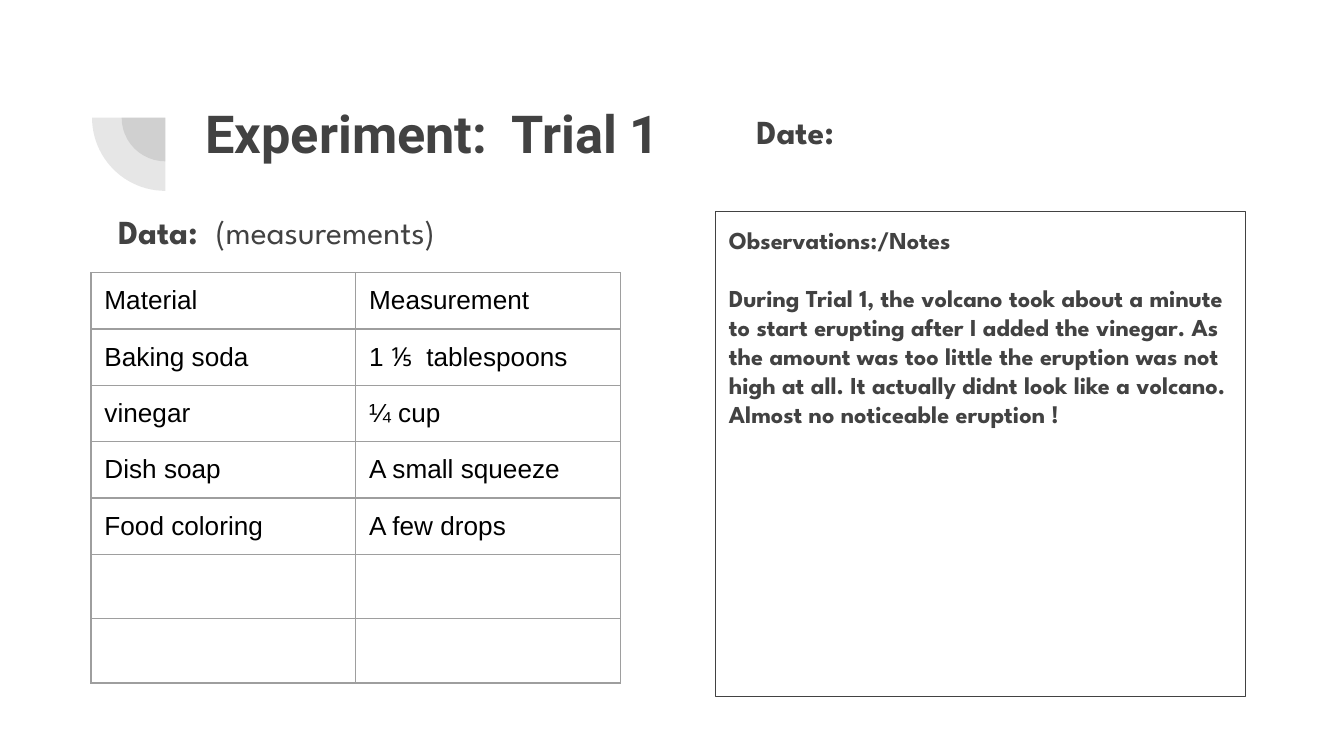
from lxml import etree
from pptx import Presentation
from pptx.dml.color import RGBColor
from pptx.enum.shapes import MSO_SHAPE
from pptx.enum.text import MSO_ANCHOR, MSO_AUTO_SIZE, PP_ALIGN
from pptx.oxml.ns import qn
from pptx.util import Inches, Pt

PIE, RECT = MSO_SHAPE.PIE, MSO_SHAPE.RECTANGLE
TOP = MSO_ANCHOR.TOP
NONE, LEFT = MSO_AUTO_SIZE.NONE, PP_ALIGN.LEFT


def color(code):
    return RGBColor.from_string(code)


def write(para, text, font="League Spartan", size=18, ink="424242", bold=True):
    run = para.add_run()
    run.text = text
    run.font.name = font
    run.font.size = Pt(size)
    run.font.bold = bold
    run.font.color.rgb = color(ink)
    para.alignment = LEFT


class Page:
    ink, rule, pad = "424242", "9E9E9E", Inches(0.1)

    def __init__(self, deck):
        self.wide, self.high = deck.slide_width, deck.slide_height
        self.slide = deck.slides.add_slide(deck.slide_layouts[5])
        self.shapes = self.slide.shapes

    def across(self, share):
        return round(self.wide * share / 100)

    def down(self, share):
        return round(self.high * share / 100)

    def area(self, x, y, w, h):
        return self.across(x), self.down(y), self.across(w), self.down(h)

    def inset(self, item):
        item.margin_left = item.margin_right = self.pad
        item.margin_top = item.margin_bottom = self.pad

    def frame(self, shape):
        frame = shape.text_frame
        frame.word_wrap = True
        frame.auto_size = NONE
        frame.vertical_anchor = TOP
        self.inset(frame)
        return frame

    def sector(self, x, y, radius):
        r = self.across(radius)
        left, top = self.across(x) - r, self.down(y) - r
        pie = self.shapes.add_shape(PIE, left, top, 2 * r, 2 * r)
        pie.adjustments[0], pie.adjustments[1] = 108, 162
        pie.rotation = 270
        pie.shadow.inherit = False
        pie.fill.solid()
        pie.fill.fore_color.rgb = color(self.ink)
        pie.line.fill.background()
        tint = pie._element.spPr.find(qn("a:solidFill"))[0]
        etree.SubElement(tint, qn("a:alpha"), val="13000")

    def title(self, text, *place):
        shape = self.shapes.title
        shape.left, shape.top, shape.width, shape.height = self.area(*place)
        write(self.frame(shape).paragraphs[0], text, font="Roboto", size=28)

    def label(self, parts, *place):
        box = self.shapes.add_textbox(*self.area(*place))
        para = self.frame(box).paragraphs[0]
        for text, bold in parts:
            write(para, text, bold=bold)

    def notes(self, head, body, *place):
        box = self.shapes.add_shape(RECT, *self.area(*place))
        box.shadow.inherit = False
        box.fill.background()
        box.line.color.rgb = color(self.ink)
        box.line.width = Pt(0.75)
        frame = self.frame(box)
        write(frame.paragraphs[0], head, size=13)
        para = frame.add_paragraph()
        para.space_before = Pt(15.5)
        write(para, body, size=13)

    def border(self, cell):
        props = cell._tc.get_or_add_tcPr()
        for side in ("lnL", "lnR", "lnT", "lnB"):
            line = etree.SubElement(props, qn("a:" + side), w=str(Pt(0.75)))
            fill = etree.SubElement(line, qn("a:solidFill"))
            etree.SubElement(fill, qn("a:srgbClr"), val=self.rule)

    def table(self, rows, tall, *place):
        grid = self.shapes.add_table(len(rows), 2, *self.area(*place)).table
        grid.first_row = grid.horz_banding = False
        for r, row in enumerate(rows):
            grid.rows[r].height = self.down(tall[r])
            for c, text in enumerate(row):
                cell = grid.cell(r, c)
                self.border(cell)
                cell.fill.background()
                if text:
                    self.inset(cell)
                    write(cell.text_frame.paragraphs[0], text, font="Arial",
                          size=14, ink="000000", bold=False)


def main():
    deck = Presentation()
    deck.slide_width = Inches(10)
    deck.slide_height = deck.slide_width * 9 // 16
    page = Page(deck)
    for radius in (3.25, 5.45):
        page.sector(12.3, 15.56, radius)
    page.title("Experiment:  Trial 1", 14.3, 11.6, 40.5, 12.62)
    page.notes(
        "Observations:/Notes",
        "During Trial 1, the volcano took about a minute to start erupting "
        "after I added the vinegar. As the amount was too little the eruption "
        "was not high at all. It actually didnt look like a volcano. Almost "
        "no noticeable eruption !",
        53.26, 27.98, 39.4, 64.18)
    page.label([("Data:  ", True), ("(measurements)", False)],
               7.8, 26.15, 42.2, 8)
    rows = [
        ("Material", "Measurement"),
        ("Baking soda", "1 ⅕  tablespoons"),
        ("vinegar", "¼ cup"),
        ("Dish soap", "A small squeeze"),
        ("Food coloring", "A few drops"),
        ("", ""),
        ("", ""),
    ]
    tall = [7.41 if row[0] else 8.53 for row in rows]
    page.table(rows, tall, 6.77, 36.07, 39.4, sum(tall))
    page.label([("Date:", True)], 55.3, 12.85, 42.2, 8)
    deck.save("out.pptx")


if __name__ == "__main__":
    main()
